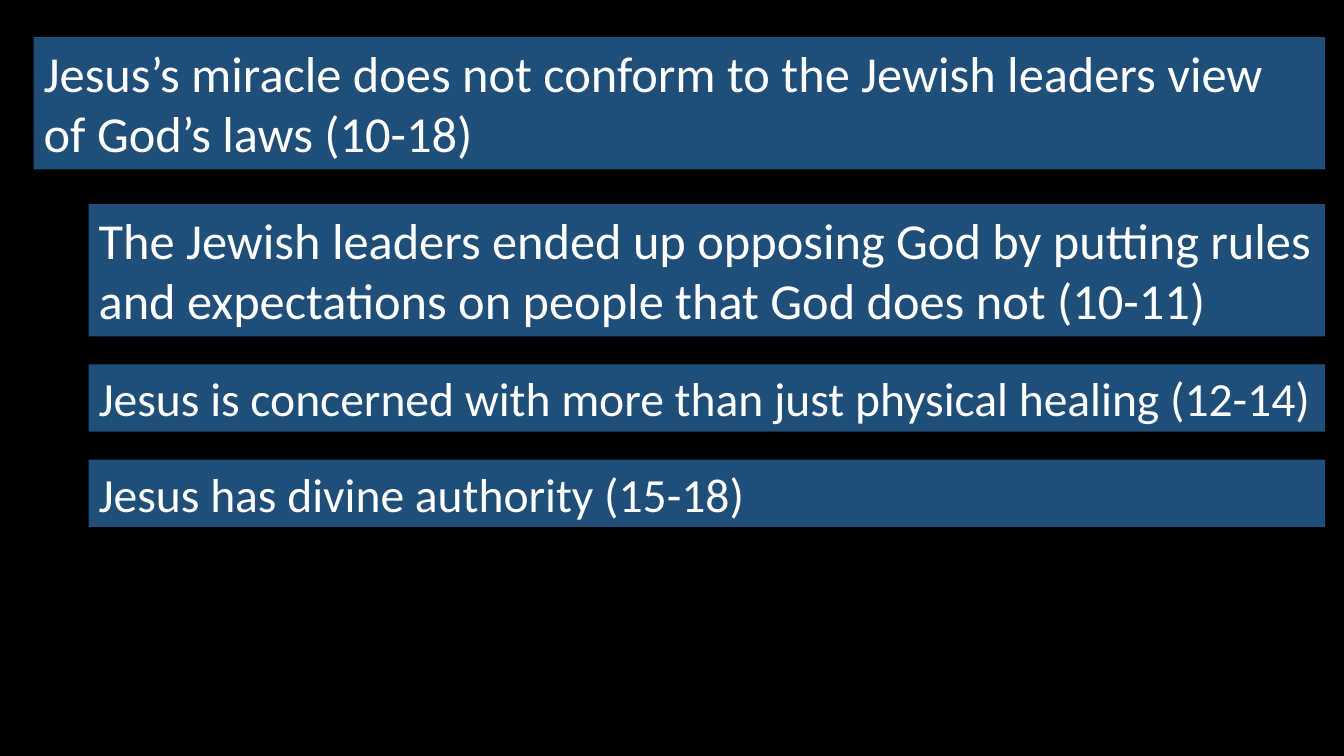
from pptx import Presentation
from pptx import util as u
from pptx.dml.color import RGBColor
from pptx.enum import text

BLACK = RGBColor(0x00, 0x00, 0x00)
BLUE = RGBColor(0x1F, 0x4E, 0x79)
WHITE = RGBColor(0xFF, 0xFF, 0xFF)

# Lengths are percentages of the slide's width or height.
RIGHT = 98.6
GAP = 3.7
TITLE = "Jesus’s miracle does not conform to the Jewish leaders view of God’s laws (10-18)"
POINTS = [
    ("The Jewish leaders ended up opposing God by putting rules "
     "and expectations on people that God does not (10-11)", 17.5, 36),
    ("Jesus is concerned with more than just physical healing (12-14)", 8.9, 34),
    ("Jesus has divine authority (15-18)", 8.9, 34),
]


class Deck:
    font = "Calibri"

    def __init__(self):
        self.prs = Presentation()
        self.prs.slide_width = u.Inches(13.33)
        self.prs.slide_height = u.Inches(7.5)
        self.slide = self.prs.slides.add_slide(self.prs.slide_layouts[5])
        fill = self.slide.background.fill
        fill.solid()
        fill.fore_color.rgb = BLACK

    def area(self, left, top, height):
        """Turn percentages into a box that ends at the right margin."""
        wide, high = self.prs.slide_width / 100, self.prs.slide_height / 100
        return [int(n) for n in (left * wide, top * high,
                                 (RIGHT - left) * wide, height * high)]

    def style(self, bar, words, size):
        bar.fill.solid()
        bar.fill.fore_color.rgb = BLUE
        frame = bar.text_frame
        frame.text = words
        frame.word_wrap = True
        frame.auto_size = text.MSO_AUTO_SIZE.SHAPE_TO_FIT_TEXT
        frame.vertical_anchor = text.MSO_ANCHOR.TOP
        line = frame.paragraphs[0]
        line.alignment = text.PP_ALIGN.LEFT
        line.font.name = self.font
        line.font.size = u.Pt(size)
        line.font.color.rgb = WHITE

    def title(self, words, left, top, height, size):
        bar = self.slide.shapes.title
        bar.left, bar.top, bar.width, bar.height = self.area(left, top, height)
        self.style(bar, words, size)

    def point(self, words, left, top, height, size):
        bar = self.slide.shapes.add_textbox(*self.area(left, top, height))
        self.style(bar, words, size)


def main():
    deck = Deck()
    deck.title(TITLE, 2.5, 4.9, 17.5, 36)
    top = 27
    for words, height, size in POINTS:
        deck.point(words, 6.6, top, height, size)
        top += height + GAP
    deck.prs.save("out.pptx")


if __name__ == "__main__":
    main()
